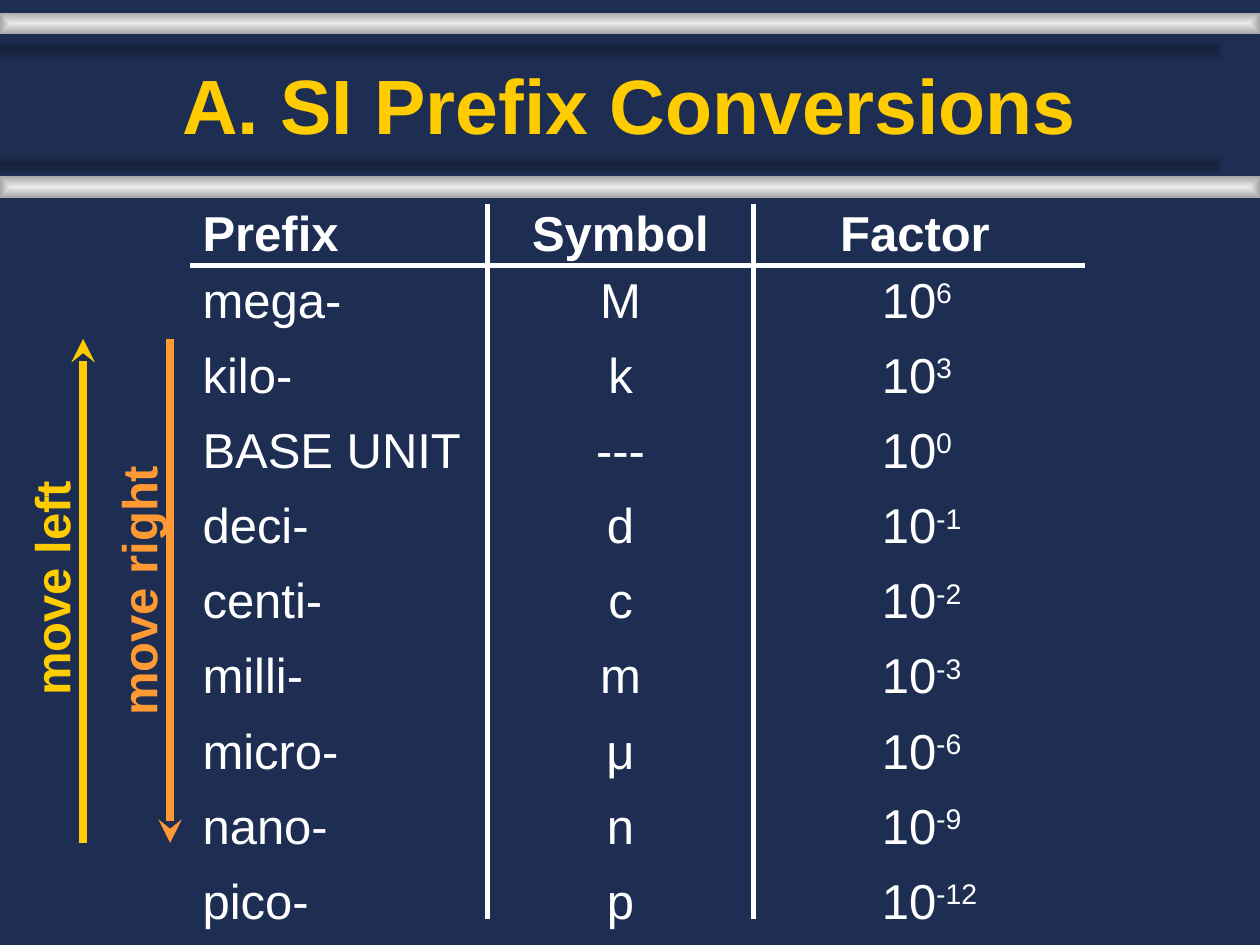
"""Build a slide with a chart of SI prefixes, symbols and factors."""
from lxml import etree
from pptx import Presentation
from pptx.dml.color import RGBColor
from pptx.enum.shapes import MSO_CONNECTOR, MSO_SHAPE
from pptx.enum.text import MSO_ANCHOR, MSO_AUTO_SIZE, PP_ALIGN
from pptx.oxml import parse_xml
from pptx.oxml.ns import nsdecls, qn
from pptx.util import Inches, Pt

LEFT, MID = PP_ALIGN.LEFT, PP_ALIGN.CENTER
LINE, RECT = MSO_CONNECTOR.STRAIGHT, MSO_SHAPE.RECTANGLE
BOTTOM, GROW = MSO_ANCHOR.BOTTOM, MSO_AUTO_SIZE.SHAPE_TO_FIT_TEXT
NAVY = RGBColor(0x1E, 0x2E, 0x53)
DARK = RGBColor(0x15, 0x21, 0x3B)
PALE = RGBColor(0xEA, 0xEA, 0xEA)
GREY = RGBColor(0xA7, 0xA7, 0xA7)
WHITE = RGBColor(0xFF, 0xFF, 0xFF)
GOLD = RGBColor(0xFF, 0xCC, 0x00)
ORANGE = RGBColor(0xFF, 0x99, 0x33)
FONT = "Arial"
TALL = 0.57
TOP, STEP = 2.09, 0.596
COLS = [(1.51, 2.83, LEFT), (3.51, 2.83, MID), (6.9, 1.81, LEFT)]
HEADS = [("Prefix", 1.51), ("Symbol", 3.51), ("Factor", 6.57)]
ROWS = [
    ("mega-", "M", "6"),
    ("kilo-", "k", "3"),
    ("BASE UNIT", "---", "0"),
    ("deci-", "d", "-1"),
    ("centi-", "c", "-2"),
    ("milli-", "m", "-3"),
    ("micro-", "μ", "-6"),
    ("nano-", "n", "-9"),
    ("pico-", "p", "-12"),
]

deck = Presentation()
deck.slide_width, deck.slide_height = Inches(10), Inches(7.5)
slide = deck.slides.add_slide(deck.slide_layouts[5])
slide.background.fill.solid()
slide.background.fill.fore_color.rgb = NAVY
shapes = slide.shapes


def add_text(text, x, y, wide, align=LEFT, color=WHITE, bold=False):
    box = shapes.add_textbox(Inches(x), Inches(y), Inches(wide), Inches(TALL))
    box.text_frame.word_wrap = True
    box.text_frame.auto_size = GROW
    para = box.text_frame.paragraphs[0]
    para.add_run().text = text
    para.alignment = align
    para.font.name, para.font.size = FONT, Pt(28)
    para.font.bold, para.font.color.rgb = bold, color
    return box


def add_line(x1, y1, x2, y2, color=WHITE, width=3, arrow=False):
    line = shapes.add_connector(LINE, Inches(x1), Inches(y1), Inches(x2), Inches(y2))
    line.line.color.rgb, line.line.width = color, Pt(width)
    if arrow:
        etree.SubElement(line.line._get_or_add_ln(), qn("a:tailEnd"), type="stealth")
    etree.SubElement(line._element.spPr, qn("a:effectLst"))


title = shapes.title
title.left, title.top = Inches(0.75), Inches(0.32)
title.width, title.height = Inches(8.5), Inches(0.92)
title.text_frame.text = "A. SI Prefix Conversions"
title.text_frame.vertical_anchor = BOTTOM
para = title.text_frame.paragraphs[0]
para.alignment = MID
para.font.name, para.font.size = FONT, Pt(44)
para.font.bold, para.font.color.rgb = True, GOLD

for x, y, inner, outer in [
    (0, 0.1, PALE, GREY),
    (-0.28, 0.31, DARK, NAVY),
    (0, 1.4, PALE, GREY),
    (-0.28, 1.22, DARK, NAVY),
]:
    bar = shapes.add_shape(RECT, Inches(x), Inches(y), Inches(10), Inches(0.17))
    bar.shadow.inherit = False
    bar.line.fill.background()
    bar.fill.gradient()
    for stop, color, place in zip(bar.fill.gradient_stops, (inner, outer), (0, 1)):
        stop.color.rgb, stop.position = color, place
    grad = bar._element.spPr.find(qn("a:gradFill"))
    grad.replace(grad.find(qn("a:lin")), parse_xml(
        f'<a:path {nsdecls("a")} path="shape">'
        '<a:fillToRect l="50000" t="50000" r="50000" b="50000"/></a:path>'))

for (text, x), (_, wide, align) in zip(HEADS, COLS):
    add_text(text, x, 1.56, wide, align, bold=True)

for row, (name, sign, power) in enumerate(ROWS):
    for text, (x, wide, align) in zip((name, sign, "10"), COLS):
        box = add_text(text, x, TOP + row * STEP, wide, align)
    run = box.text_frame.paragraphs[0].add_run()
    run.text = power
    run._r.get_or_add_rPr().set("baseline", "30000")

add_line(1.51, 2.11, 8.61, 2.11)
for x in (3.87, 5.98):
    add_line(x, 1.62, x, 7.29)

for text, x, y, wide, line_x, start, end, color in [
    ("move left", -0.55, 4.38, 1.91, 0.66, 6.69, 2.69, GOLD),
    ("move right", 0, 4.4, 2.19, 1.35, 2.69, 6.69, ORANGE),
]:
    add_line(line_x, start, line_x, end, color, 4.5, True)
    label = add_text(text, x, y, wide, color=color, bold=True)
    label.text_frame.word_wrap = False
    label.rotation = 270

deck.save("out.pptx")
